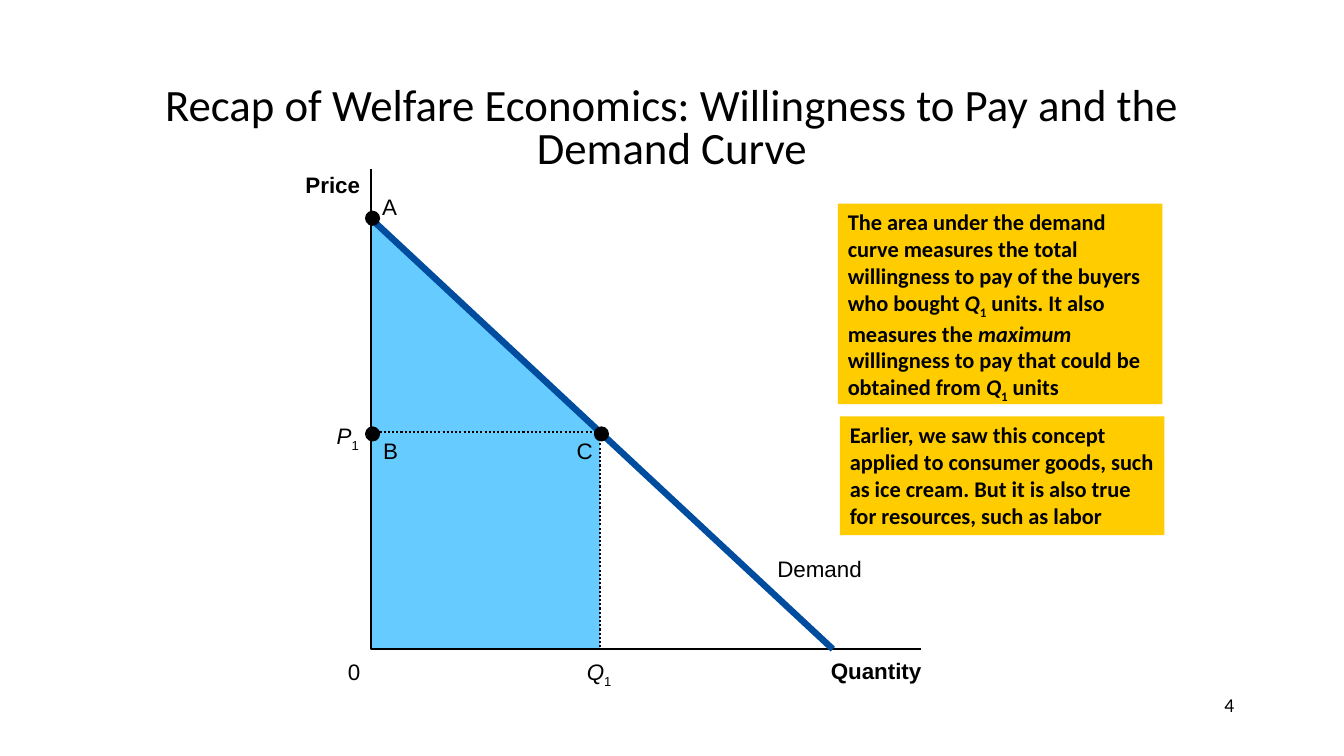
import pptx
import pptx.dml.color
import pptx.enum.dml
import pptx.enum.shapes
import pptx.enum.text
import pptx.oxml.ns
import pptx.util
from lxml import etree

Inches = pptx.util.Inches
BLACK, SKY, NAVY, GOLD = "000000", "66CCFF", "004C9F", "FFCC00"
SHAPES = pptx.enum.shapes.MSO_SHAPE
ALIGN = pptx.enum.text.PP_ALIGN
ANCHOR = pptx.enum.text.MSO_ANCHOR
Q1 = [("Q", "italic"), ("1", "subscript")]
P1 = [("P", "italic"), ("1", "subscript")]
AREA_NOTE = [
    ("The area under the demand curve measures the total willingness to pay "
     "of the buyers who bought ", ""), *Q1,
    (" units. It also measures the ", ""), ("maximum", "italic"),
    (" willingness to pay that could be obtained from ", ""), *Q1,
    (" units", ""),
]
LABOR_NOTE = [
    ("Earlier, we saw this concept applied to consumer goods, such as ice "
     "cream. But it is also true for resources, such as labor", ""),
]


def color(value):
    """Turn a hex string into a colour."""
    return pptx.dml.color.RGBColor.from_string(value)


def paint(shape, fill=None, line=None, width=1.5):
    """Set the fill and outline of a shape and remove its shadow."""
    shape.shadow.inherit = False
    if fill:
        shape.fill.solid()
        shape.fill.fore_color.rgb = color(fill)
    else:
        shape.fill.background()
    if line:
        shape.line.color.rgb = color(line)
        shape.line.width = pptx.util.Pt(width)
    else:
        shape.line.fill.background()


def style_font(font, name, size, bold=False):
    """Give a font its face, size, weight and black colour."""
    font.name = name
    font.size = pptx.util.Pt(size)
    font.bold = bold
    font.color.rgb = color(BLACK)


def write_runs(paragraph, parts, name, size, bold=False):
    """Write (text, style) parts as runs of one paragraph."""
    for text, style in parts:
        run = paragraph.add_run()
        run.text = text
        style_font(run.font, name, size, bold)
        run.font.italic = style == "italic"
        if style == "subscript":
            run.font._element.set("baseline", "-25000")


def add_title(slide, text, left, top, width, height):
    """Place and format the slide title."""
    title = slide.shapes.title
    title.left, title.top = Inches(left), Inches(top)
    title.width, title.height = Inches(width), Inches(height)
    frame = title.text_frame
    frame.text = text
    frame.word_wrap = True
    frame.auto_size = pptx.enum.text.MSO_AUTO_SIZE.NONE
    frame.vertical_anchor = ANCHOR.MIDDLE
    paragraph = frame.paragraphs[0]
    paragraph.alignment = ALIGN.CENTER
    paragraph.line_spacing = 0.8
    style_font(paragraph.runs[0].font, "Calibri", 32)


def add_page_number(slide, number, left, top, width, height):
    """Write the page number at the right of its box."""
    box = slide.shapes.add_textbox(
        Inches(left), Inches(top), Inches(width), Inches(height))
    box.text_frame.word_wrap = True
    paragraph = box.text_frame.paragraphs[0]
    paragraph.text = number
    paragraph.alignment = ALIGN.RIGHT
    style_font(paragraph.runs[0].font, "Calibri", 14)


def add_label(slide, parts, left, top, width, bold=False):
    """Add an unwrapped graph label without margins."""
    box = slide.shapes.add_textbox(
        Inches(left), Inches(top), Inches(width), Inches(0.27))
    frame = box.text_frame
    frame.word_wrap = False
    frame.auto_size = pptx.enum.text.MSO_AUTO_SIZE.SHAPE_TO_FIT_TEXT
    frame.margin_left = frame.margin_right = 0
    frame.margin_top = frame.margin_bottom = 0
    write_runs(frame.paragraphs[0], parts, "Arial", 16, bold)


def add_path(slide, points, close=False):
    """Draw a freeform through points given in inches."""
    corners = [(Inches(x), Inches(y)) for x, y in points]
    builder = slide.shapes.build_freeform(*corners[0])
    builder.add_line_segments(corners[1:], close=close)
    return builder.convert_to_shape()


def add_demand_graph(slide, left, top, width, height):
    """Draw the demand graph with its axes spanning the given box."""
    right, bottom = left + width, top + height
    price_top, price, quantity = top + 0.47, top + 2.61, left + 2.27

    triangle = add_path(
        slide, [(left, price_top), (left, price), (quantity, price)], True)
    paint(triangle, SKY)
    rectangle = slide.shapes.add_shape(
        SHAPES.RECTANGLE, Inches(left), Inches(price),
        Inches(quantity - left), Inches(bottom - price))
    paint(rectangle, SKY)

    axes = add_path(slide, [(left, top), (left, bottom), (right, bottom)])
    paint(axes, line=BLACK)
    demand = slide.shapes.add_connector(
        pptx.enum.shapes.MSO_CONNECTOR.STRAIGHT, Inches(left),
        Inches(price_top + 0.02), Inches(left + 4.58), Inches(bottom))
    demand.line.color.rgb = color(NAVY)
    demand.line.width = pptx.util.Pt(4.63)
    etree.SubElement(
        demand._element.spPr, pptx.oxml.ns.qn("a:effectLst"))
    guide = add_path(
        slide, [(left, price), (quantity, price), (quantity, bottom)])
    paint(guide, line=BLACK)
    guide.line.dash_style = pptx.enum.dml.MSO_LINE.ROUND_DOT

    for x, y in [(left, price_top), (left, price), (quantity, price)]:
        dot = slide.shapes.add_shape(
            SHAPES.OVAL, Inches(x + 0.015 - 0.075), Inches(y + 0.015 - 0.075),
            Inches(0.15), Inches(0.15))
        paint(dot, BLACK)

    for text, x, y, label_width, bold in [
            ("Price", left - 0.65, top + 0.02, 0.55, True),
            ("Quantity", right - 0.9, bottom + 0.08, 0.91, True),
            ("0", left - 0.23, bottom + 0.09, 0.12, False),
            ("Demand", left + 4.03, bottom - 0.93, 0.85, False),
            ("A", left + 0.11, price_top - 0.23, 0.15, False),
            ("B", left + 0.12, price + 0.05, 0.15, False),
            ("C", quantity - 0.23, price + 0.05, 0.16, False)]:
        add_label(slide, [(text, "")], x, y, label_width, bold)
    add_label(slide, P1, left - 0.34, price - 0.1, 0.23)
    add_label(slide, Q1, quantity - 0.13, bottom + 0.09, 0.26)


def add_note(slide, parts, left, top, width, height):
    """Add a gold note with bold text."""
    note = slide.shapes.add_shape(
        SHAPES.RECTANGLE, Inches(left), Inches(top), Inches(width),
        Inches(height))
    paint(note, GOLD)
    frame = note.text_frame
    frame.word_wrap = True
    frame.auto_size = pptx.enum.text.MSO_AUTO_SIZE.SHAPE_TO_FIT_TEXT
    frame.vertical_anchor = ANCHOR.TOP
    paragraph = frame.paragraphs[0]
    paragraph.alignment = ALIGN.LEFT
    write_runs(paragraph, parts, "Calibri", 16, True)


def main():
    """Build and save the presentation."""
    presentation = pptx.Presentation()
    presentation.slide_width = Inches(13.33)
    presentation.slide_height = Inches(7.5)
    slide = presentation.slides.add_slide(presentation.slide_layouts[5])
    add_title(slide, "Recap of Welfare Economics: Willingness to Pay and the "
              "Demand Curve", 1, 0.67, 11.33, 1.25)
    add_page_number(slide, "4", 9.56, 6.83, 2.78, 0.5)
    add_demand_graph(slide, 3.68, 1.68, 5.46, 4.76)
    add_note(slide, AREA_NOTE, 8.31, 2.02, 3.22, 1.99)
    add_note(slide, LABOR_NOTE, 8.33, 4.13, 3.22, 1.18)
    presentation.save("out.pptx")


if __name__ == "__main__":
    main()
